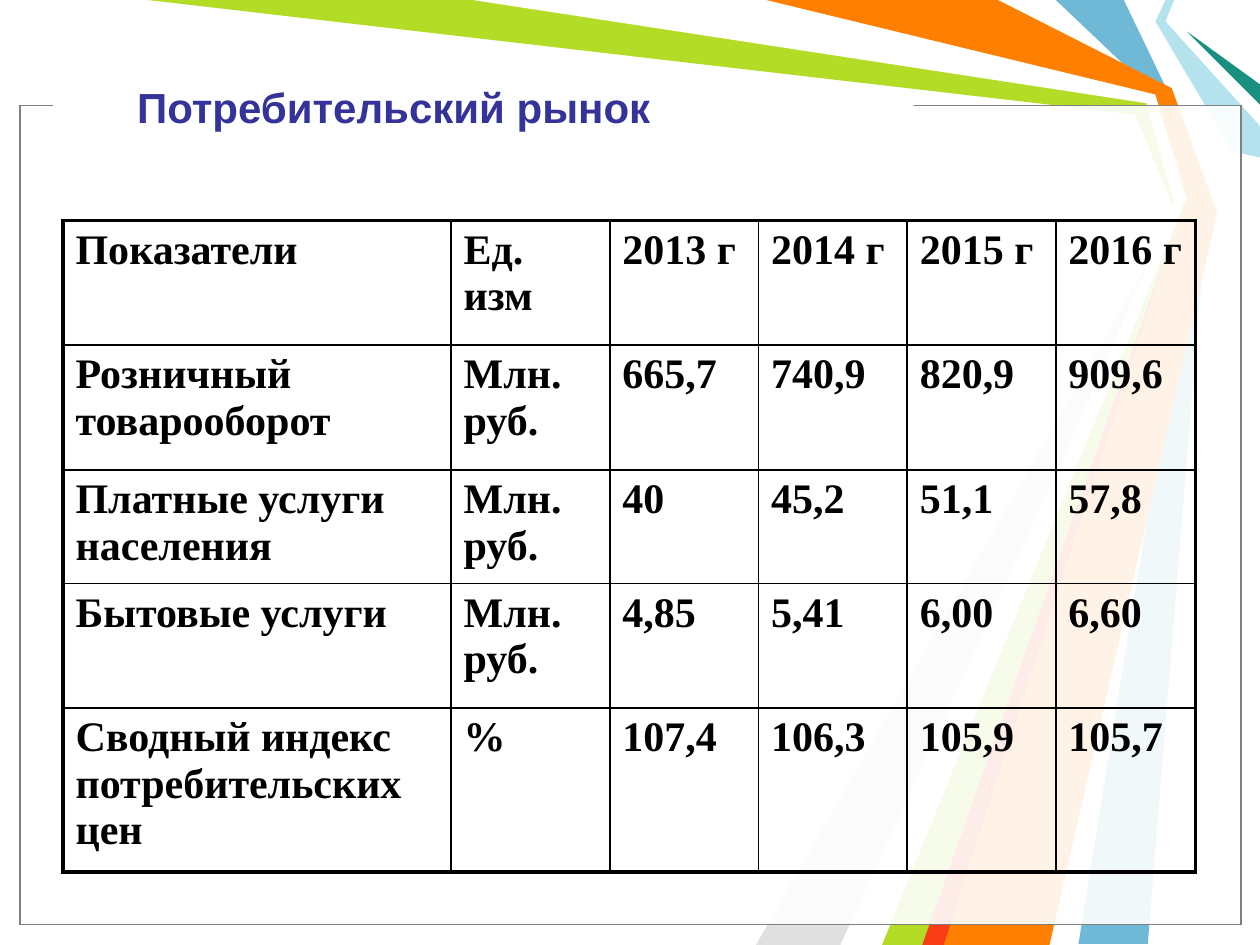
from lxml.etree import SubElement
from pptx import Presentation
from pptx.dml.color import RGBColor
from pptx.enum.shapes import MSO_SHAPE as Shape
from pptx.enum.text import MSO_ANCHOR as Anchor
from pptx.oxml.ns import qn
from pptx.util import Inches, Pt

COLORS = {
    "blue": "6FB9D7", "lime": "B3DC27", "silver": "E0E0E0", "white": "FFFFFF",
    "aqua": "B4E3EE", "teal": "189180", "orange": "FF7F00", "red": "F93D17",
    "black": "000000", "gray": "808080", "title": "333399",
}

RAYS = [
    ("blue", [(8.92, 0), (9.29, 0.77), (9.58, 1.67), (9.11, 7.49), (8.56, 7.49),
              (9.5, 1.67), (9.17, 0.75), (8.38, 0)]),
    ("lime", [(1.17, 0), (3.83, 0), (9.14, 0.78), (9.42, 1.69), (7.42, 7.5),
              (6.92, 7.5), (9.35, 1.73), (9.01, 0.91)]),
    ("silver", [(6.67, 7.5), (9.27, 1.81), (6, 7.5)]),
    ("white", [(3.75, 0), (9.1, 0.82), (9.32, 1.62), (6.75, 7.5), (7, 7.5),
               (9.41, 1.58), (9.17, 0.75), (6, 0)]),
    ("aqua", [(9.25, 0), (9.17, 0.17), (9.78, 1.2), (10, 1.25), (10, 1),
              (9.25, 0.17), (9.32, 0)]),
    ("teal", [(10, 0.83), (9.42, 0.25), (10, 0.67)]),
    ("orange", [(6.08, 0), (7.92, 0), (9.3, 0.7), (9.66, 1.69), (8.33, 7.5),
                (7.33, 7.5), (9.42, 1.58), (9.17, 0.75)]),
    ("red", [(7.32, 7.5), (9.32, 1.83), (7.49, 7.5)]),
]

COLUMN_WIDTHS = [3.08, 1.26, 1.18, 1.18, 1.18, 1.11]
ROW_HEIGHTS = [0.99, 0.99, 0.89, 0.99, 0.99]
ROWS = [
    ["Показатели", "Ед. изм", "2013 г", "2014 г", "2015 г", "2016 г"],
    ["Розничный товарооборот", "Млн. руб.", "665,7", "740,9", "820,9", "909,6"],
    ["Платные услуги населения", "Млн. руб.", "40", "45,2", "51,1", "57,8"],
    ["Бытовые услуги", "Млн. руб.", "4,85", "5,41", "6,00", "6,60"],
    ["Сводный индекс потребительских цен", "%", "107,4", "106,3", "105,9", "105,7"],
]


def paint(shape, fill, line=None):
    shape.shadow.inherit = False
    shape.fill.solid()
    shape.fill.fore_color.rgb = RGBColor.from_string(COLORS[fill])
    if line:
        shape.line.color.rgb = RGBColor.from_string(COLORS[line])
        shape.line.width = Pt(0.75)
    else:
        shape.line.fill.background()


def style(paragraph, name, color):
    paragraph.font.name = name
    paragraph.font.size = Pt(24)
    paragraph.font.bold = True
    paragraph.font.color.rgb = RGBColor.from_string(COLORS[color])


deck = Presentation()
deck.slide_width = Inches(10)
deck.slide_height = Inches(7.5)
page = deck.slides.add_slide(deck.slide_layouts[6])

for color, corners in RAYS:
    points = [(Inches(x), Inches(y)) for x, y in corners]
    builder = page.shapes.build_freeform(*points[0])
    builder.add_line_segments(points[1:], close=True)
    paint(builder.convert_to_shape(), color)

for line in ("black", "gray"):
    panel = page.shapes.add_shape(
        Shape.RECTANGLE, Inches(0.16), Inches(0.84), Inches(9.69), Inches(6.5))
    paint(panel, "white", line)
    fill_color = panel.fill._xPr.find(qn("a:solidFill"))[0]
    SubElement(fill_color, qn("a:alpha"), val="69000")

title_gap = page.shapes.add_shape(
    Shape.RECTANGLE, Inches(0.42), Inches(0.74), Inches(6.83), Inches(0.17))
paint(title_gap, "white")

title = page.shapes.add_textbox(Inches(0.99), Inches(0.22), Inches(6.89), Inches(1.25))
title.text_frame.word_wrap = True
title.text_frame.vertical_anchor = Anchor.MIDDLE
title.text_frame.text = "Потребительский рынок"
style(title.text_frame.paragraphs[0], "Arial", "title")

table = page.shapes.add_table(
    len(ROWS), len(COLUMN_WIDTHS),
    Inches(0.5), Inches(1.75), Inches(9), Inches(5.17)).table
table.first_row = False
table.horz_banding = False
for column, width in zip(table.columns, COLUMN_WIDTHS):
    column.width = Inches(width)
for row, height in zip(table.rows, ROW_HEIGHTS):
    row.height = Inches(height)

last_row, last_column = len(ROWS) - 1, len(COLUMN_WIDTHS) - 1
for r, texts in enumerate(ROWS):
    for c, text in enumerate(texts):
        cell = table.cell(r, c)
        cell.text = text
        style(cell.text_frame.paragraphs[0], "Times New Roman", "black")
        properties = cell._tc.get_or_add_tcPr()
        outer_sides = {"L": c == 0, "R": c == last_column, "T": r == 0, "B": r == last_row}
        for side, outer in outer_sides.items():
            border = SubElement(properties, qn(f"a:ln{side}"), w=str(Pt(2.25 if outer else 1)))
            border_fill = SubElement(border, qn("a:solidFill"))
            SubElement(border_fill, qn("a:srgbClr"), val=COLORS["black"])
        cell.fill.background()

deck.save("out.pptx")
